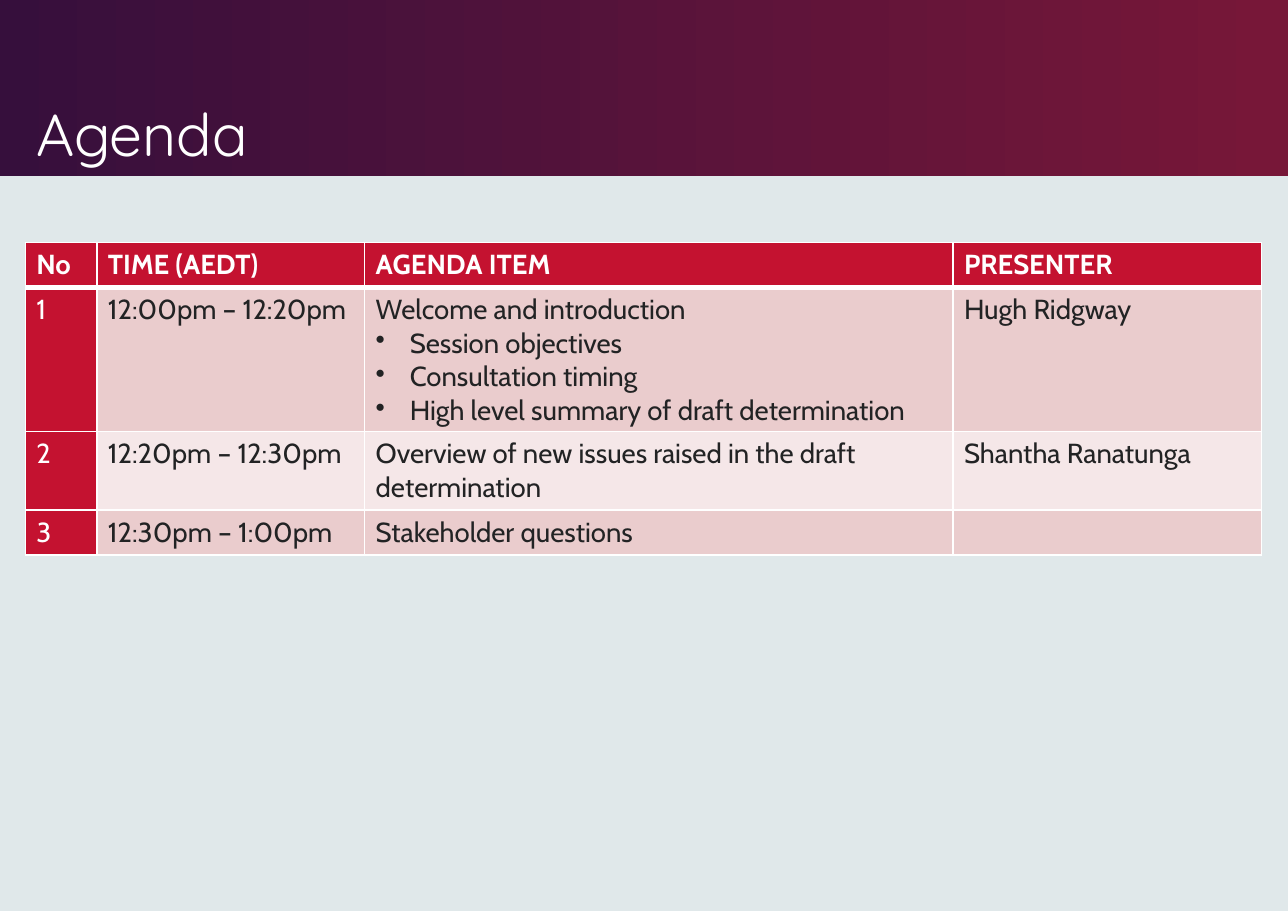
from dataclasses import dataclass

from lxml import etree
from pptx import Presentation
from pptx.dml.color import RGBColor
from pptx.enum.shapes import MSO_SHAPE
from pptx.enum.text import MSO_ANCHOR
from pptx.oxml.ns import qn
from pptx.util import Inches, Pt

RECTANGLE = MSO_SHAPE.RECTANGLE
BOTTOM = MSO_ANCHOR.BOTTOM


@dataclass(frozen=True)
class Theme:
    background: str = "E0E8EA"
    banner_start: str = "360F3C"
    banner_end: str = "771738"
    accent: str = "C41230"
    bands: tuple = ("EACCCD", "F5E7E8")
    white: str = "FFFFFF"
    ink: str = "222324"
    title_font: str = "Quicksand"
    body_font: str = "Cabin"
    title_size: float = 38.6
    body_size: float = 18
    rule: float = 1
    header_rule: float = 3


THEME = Theme()
SLIDE_SIZE = (11.69, 8.27)
BULLET = "•"
BULLET_INDENT = 0.31
COLUMN_WIDTHS = (0.65, 2.43, 5.34, 2.8)
ROW_HEIGHTS = (0.41, 1.31, 0.71, 0.41)

# Each cell is a list of lines; lines after the first are bullets
AGENDA = [
    [["No"], ["TIME (AEDT)"], ["AGENDA ITEM"], ["PRESENTER"]],
    [["1"], ["12:00pm – 12:20pm"],
     ["Welcome and introduction", "Session objectives", "Consultation timing",
      "High level summary of draft determination"],
     ["Hugh Ridgway"]],
    [["2"], ["12:20pm – 12:30pm"],
     ["Overview of new issues raised in the draft determination"],
     ["Shantha Ranatunga"]],
    [["3"], ["12:30pm – 1:00pm"], ["Stakeholder questions"], []],
]


def color(value):
    return RGBColor.from_string(value)


def style_para(para, font, size, ink, bold=False):
    for span in para.runs:
        span.font.name = font
        span.font.size = Pt(size)
        span.font.color.rgb = color(ink)
        span.font.bold = bold


def add_bullet(para):
    properties = para._p.get_or_add_pPr()
    properties.set("marL", str(Inches(BULLET_INDENT)))
    properties.set("indent", str(-Inches(BULLET_INDENT)))
    etree.SubElement(properties, qn("a:buChar")).set("char", BULLET)


def add_borders(cell, bottom_width, top_width):
    """Cell lines must stand before the fill, in the order left, right, top, bottom."""
    widths = {"a:lnL": THEME.rule, "a:lnR": THEME.rule,
              "a:lnT": top_width, "a:lnB": bottom_width}
    properties = cell._tc.get_or_add_tcPr()
    for index, (tag, width) in enumerate(widths.items()):
        line = etree.Element(qn(tag), w=str(Pt(width)))
        fill = etree.SubElement(line, qn("a:solidFill"))
        etree.SubElement(fill, qn("a:srgbClr")).set("val", THEME.white)
        properties.insert(index, line)


def add_banner(page, left, top, width, height):
    # Gradient band
    band = page.shapes.add_shape(RECTANGLE, Inches(left), Inches(top),
                                 Inches(width), Inches(height))
    band.shadow.inherit = False
    band.line.fill.background()
    band.fill.gradient()
    band.fill.gradient_angle = 0
    stops = band.fill.gradient_stops
    for stop, value in zip(stops, (THEME.banner_start, THEME.banner_end)):
        stop.color.rgb = color(value)
    stops[1].position = 0.99

    # Title
    box = page.shapes.add_textbox(Inches(left + 0.23), Inches(top + 0.16),
                                  Inches(8.63), Inches(height - 0.17))
    frame = box.text_frame
    frame.word_wrap = True
    frame.vertical_anchor = BOTTOM
    frame.text = "Agenda"
    para = frame.paragraphs[0]
    para.line_spacing = 0.9
    style_para(para, THEME.title_font, THEME.title_size, THEME.white)


def fill_cell(cell, lines, row, column):
    is_header = row == 0
    is_accent = is_header or column == 0
    cell.fill.solid()
    cell.fill.fore_color.rgb = color(
        THEME.accent if is_accent else THEME.bands[(row - 1) % 2])
    add_borders(cell,
                bottom_width=THEME.header_rule if is_header else THEME.rule,
                top_width=THEME.header_rule if row == 1 else THEME.rule)
    cell.text_frame.text = "\n".join(lines)
    for index, para in enumerate(cell.text_frame.paragraphs):
        if index:
            add_bullet(para)
        style_para(para, THEME.body_font, THEME.body_size,
                   THEME.white if is_accent else THEME.ink, is_header)


def add_agenda_table(page, left, top):
    frame = page.shapes.add_table(
        len(ROW_HEIGHTS), len(COLUMN_WIDTHS), Inches(left), Inches(top),
        Inches(sum(COLUMN_WIDTHS)), Inches(sum(ROW_HEIGHTS)))
    table = frame.table
    for column, width in zip(table.columns, COLUMN_WIDTHS):
        column.width = Inches(width)
    for row, height in zip(table.rows, ROW_HEIGHTS):
        row.height = Inches(height)
    for row, cells in enumerate(AGENDA):
        for column, lines in enumerate(cells):
            fill_cell(table.cell(row, column), lines, row, column)


def main():
    deck = Presentation()
    width, height = SLIDE_SIZE
    deck.slide_width, deck.slide_height = Inches(width), Inches(height)
    page = deck.slides.add_slide(deck.slide_layouts[6])
    page.background.fill.solid()
    page.background.fill.fore_color.rgb = color(THEME.background)
    add_banner(page, 0, 0, width, 1.6)
    add_agenda_table(page, 0.23, 2.2)
    deck.save("out.pptx")


if __name__ == "__main__":
    main()
